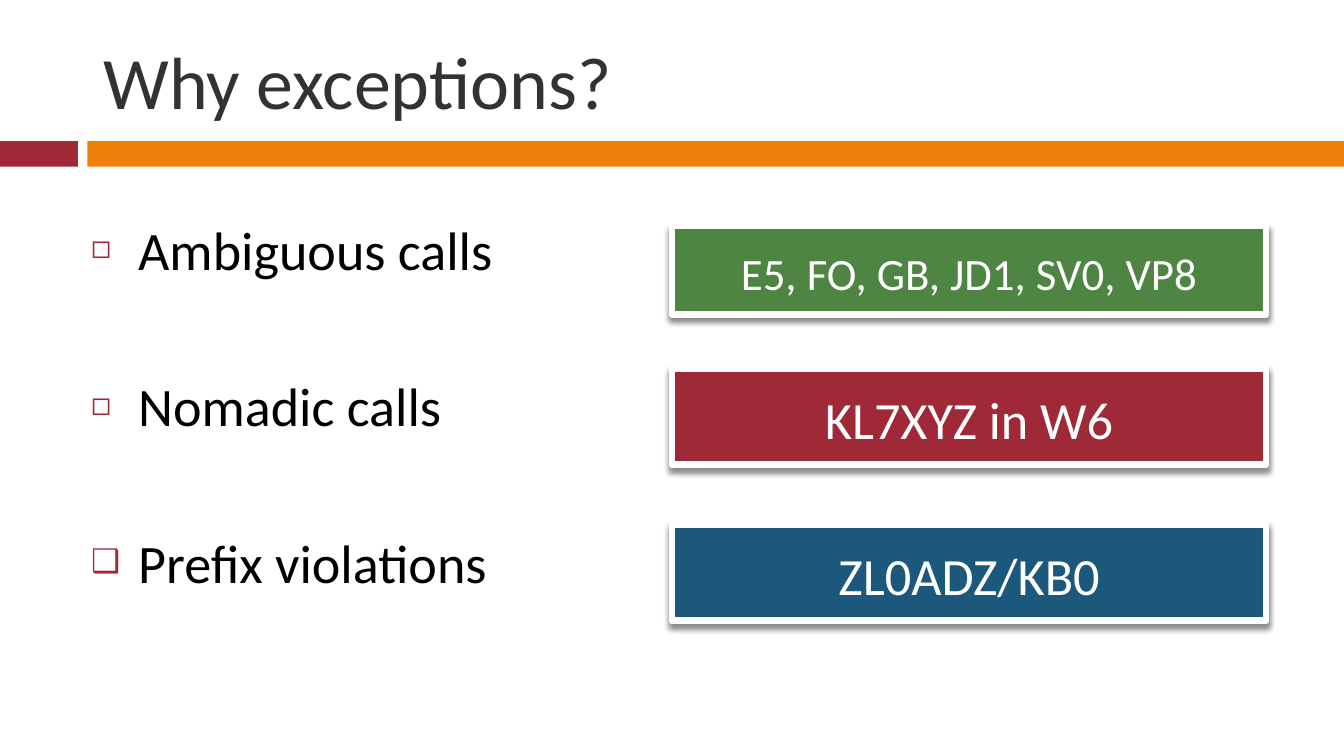
from dataclasses import dataclass

from lxml.etree import SubElement
from pptx import Presentation
from pptx.dml.color import RGBColor
from pptx.enum.shapes import MSO_SHAPE
from pptx.enum.text import MSO_ANCHOR, MSO_AUTO_SIZE, PP_ALIGN
from pptx.oxml.ns import qn
from pptx.util import Inches, Pt


@dataclass(frozen=True)
class Theme:
    font: str = "Calibri"
    title_size: float = 39.6
    bullet_size: float = 29
    large_label: float = 28
    small_label: float = 24
    title: str = "323232"
    text: str = "000000"
    white: str = "FFFFFF"
    red: str = "9F2936"
    orange: str = "F07F09"
    green: str = "4E8542"
    blue: str = "1B587C"


THEME = Theme()
WIDTH = 10
HEIGHT = WIDTH * 9 / 16
BAND_TOP, BAND_HEIGHT, BAND_SPLIT, BAND_GAP = 1.05, 0.19, 0.58, 0.07
CARD_LEFT, CARD_WIDTH = WIDTH / 2, 4.42
BULLET_GAP = 49

# Bullet text, bullet sign, card text, card size, fill, top, height
ROWS = [
    ("Ambiguous calls", "◻", "E5, FO, GB, JD1, SV0, VP8",
     THEME.small_label, THEME.green, 1.68, 0.66),
    ("Nomadic calls", "◻", "KL7XYZ in W6",
     THEME.large_label, THEME.red, 2.74, 0.72),
    ("Prefix violations", "❑", "ZL0ADZ/KB0",
     THEME.large_label, THEME.blue, 3.9, 0.72),
]


def format_font(paragraph, size, color):
    for run in paragraph.runs:
        run.font.name = THEME.font
        run.font.size = Pt(size)
        run.font.color.rgb = RGBColor.from_string(color)


def add_rectangle(slide, left, top, width, height, color):
    shape = slide.shapes.add_shape(
        MSO_SHAPE.RECTANGLE, *map(Inches, (left, top, width, height)))
    shape.shadow.inherit = False
    shape.fill.solid()
    shape.fill.fore_color.rgb = RGBColor.from_string(color)
    shape.line.fill.background()
    return shape


def add_title(slide, text):
    title = slide.shapes.title
    title.left, title.top, title.width, title.height = map(
        Inches, (0.67, 0.19, 8.92, 0.81))
    frame = title.text_frame
    frame.text = text
    frame.auto_size = MSO_AUTO_SIZE.NONE
    frame.vertical_anchor = MSO_ANCHOR.MIDDLE
    frame.paragraphs[0].alignment = PP_ALIGN.LEFT
    format_font(frame.paragraphs[0], THEME.title_size, THEME.title)


def set_bullet(paragraph, sign):
    properties = paragraph._p.get_or_add_pPr()
    properties.set("marL", str(Inches(0.35)))
    properties.set("indent", str(Inches(-0.35)))
    color = SubElement(properties, qn("a:buClr"))
    SubElement(color, qn("a:srgbClr"), val=THEME.red)
    SubElement(properties, qn("a:buSzPct"), val="60000")
    SubElement(properties, qn("a:buFont"), typeface=THEME.font)
    SubElement(properties, qn("a:buChar"), char=sign)


def add_bullets(slide, items):
    box = slide.shapes.add_textbox(*map(Inches, (0.58, 1.56, 4.25, 3.75)))
    frame = box.text_frame
    frame.word_wrap = True
    for index, (text, sign) in enumerate(items):
        paragraph = frame.add_paragraph() if index else frame.paragraphs[0]
        paragraph.text = text
        set_bullet(paragraph, sign)
        if index:
            paragraph.space_before = Pt(BULLET_GAP)
        format_font(paragraph, THEME.bullet_size, THEME.text)


def add_shadow(shape):
    effects = shape._element.spPr.find(qn("a:effectLst"))
    shadow = SubElement(
        effects, qn("a:outerShdw"), blurRad=str(Pt(3)), dist=str(Pt(2.4)),
        dir="5400000", algn="ctr", rotWithShape="0")
    color = SubElement(shadow, qn("a:srgbClr"), val="000000")
    SubElement(color, qn("a:alpha"), val="45000")


def add_card(slide, text, size, color, top, height):
    card = add_rectangle(slide, CARD_LEFT, top, CARD_WIDTH, height, color)
    card.line.color.rgb = RGBColor.from_string(THEME.white)
    card.line.width = Pt(3.75)
    add_shadow(card)
    frame = card.text_frame
    frame.text = text
    frame.word_wrap = True
    frame.auto_size = MSO_AUTO_SIZE.SHAPE_TO_FIT_TEXT
    frame.vertical_anchor = MSO_ANCHOR.MIDDLE
    frame.margin_left = frame.margin_right = frame.margin_top = Inches(0.2)
    frame.margin_bottom = Inches(0.1)
    paragraph = frame.paragraphs[0]
    paragraph.alignment = PP_ALIGN.CENTER
    paragraph.line_spacing = 0.85
    format_font(paragraph, size, THEME.white)


def main():
    presentation = Presentation()
    presentation.slide_width = Inches(WIDTH)
    presentation.slide_height = Inches(HEIGHT)
    slide = presentation.slides.add_slide(presentation.slide_layouts[5])

    # Two-part band under the title
    orange_left = BAND_SPLIT + BAND_GAP
    add_rectangle(slide, 0, BAND_TOP, BAND_SPLIT, BAND_HEIGHT, THEME.red)
    add_rectangle(slide, orange_left, BAND_TOP, WIDTH - orange_left,
                  BAND_HEIGHT, THEME.orange)
    add_title(slide, "Why exceptions?")

    # Reasons on the left, example call signs on the right
    add_bullets(slide, [row[:2] for row in ROWS])
    for row in ROWS:
        add_card(slide, *row[2:])

    presentation.save("out.pptx")


if __name__ == "__main__":
    main()
